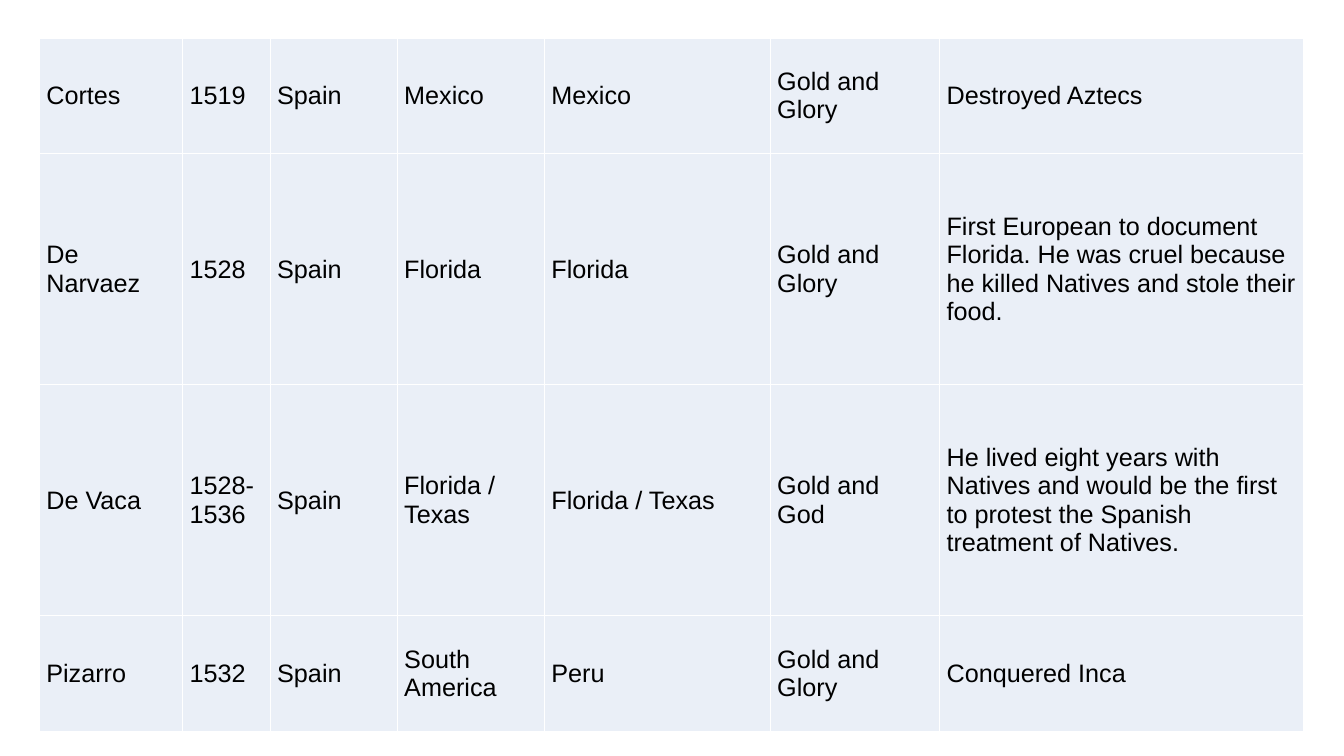
"""Build a slide with a table of Spanish explorers."""
import dataclasses
import typing

import lxml.etree
import pptx
import pptx.dml.color
import pptx.enum.text
import pptx.oxml.ns
import pptx.table
import pptx.util


@dataclasses.dataclass(frozen=True)
class Theme:
    font: str = "Arial"
    text_size: int = 18
    space_after: int = 12
    border_width: int = 1
    text: str = "000000"
    cell: str = "EAEFF7"
    border: str = "FFFFFF"


class Explorer(typing.NamedTuple):
    name: str
    years: str
    country: str
    region: str
    place: str
    motive: str
    outcome: str
    row_units: int


THEME = Theme()
PAGE_WIDTH = pptx.util.Inches(13.33)
PAGE_HEIGHT = pptx.util.Inches(7.5)
TABLE_LEFT = pptx.util.Inches(0.39)
TABLE_TOP = pptx.util.Inches(0.38)
COLUMN_WIDTHS = (1.42, 0.87, 1.26, 1.46, 2.24, 1.68, 3.61)
ROW_UNIT = pptx.util.Inches(1.146)
SIDE_MARGIN = pptx.util.Inches(0.07)

EXPLORERS = (
    Explorer("Cortes", "1519", "Spain", "Mexico", "Mexico",
             "Gold and Glory", "Destroyed Aztecs", 1),
    Explorer("De Narvaez", "1528", "Spain", "Florida", "Florida", "Gold and Glory",
             "First European to document Florida. He was cruel because "
             "he killed Natives and stole their food.", 2),
    Explorer("De Vaca", "1528- 1536", "Spain", "Florida / Texas", "Florida / Texas",
             "Gold and God",
             "He lived eight years with Natives and would be the first "
             "to protest the Spanish treatment of Natives.", 2),
    Explorer("Pizarro", "1532", "Spain", "South America", "Peru",
             "Gold and Glory", "Conquered Inca", 1),
)


def add_borders(cell: pptx.table._Cell) -> None:
    """Draw a thin line on all four sides of a cell."""
    qualified = pptx.oxml.ns.qn
    properties = cell._tc.get_or_add_tcPr()
    for index, side in enumerate(("lnL", "lnR", "lnT", "lnB")):
        line = lxml.etree.Element(qualified(f"a:{side}"),
                                  w=str(pptx.util.Pt(THEME.border_width)))
        fill = lxml.etree.SubElement(line, qualified("a:solidFill"))
        lxml.etree.SubElement(fill, qualified("a:srgbClr"), val=THEME.border)
        properties.insert(index, line)


def fill_cell(cell: pptx.table._Cell, text: str) -> None:
    """Write and format one cell."""
    cell.text = text
    cell.vertical_anchor = pptx.enum.text.MSO_ANCHOR.MIDDLE
    cell.margin_left = cell.margin_right = SIDE_MARGIN
    cell.margin_top = cell.margin_bottom = 0
    cell.fill.solid()
    cell.fill.fore_color.rgb = pptx.dml.color.RGBColor.from_string(THEME.cell)
    para = cell.text_frame.paragraphs[0]
    para.space_after = pptx.util.Pt(THEME.space_after)
    para.font.name = THEME.font
    para.font.size = pptx.util.Pt(THEME.text_size)
    para.font.color.rgb = pptx.dml.color.RGBColor.from_string(THEME.text)
    add_borders(cell)


def main() -> None:
    """Create the deck and save it."""
    deck = pptx.Presentation()
    deck.slide_width, deck.slide_height = PAGE_WIDTH, PAGE_HEIGHT
    page = deck.slides.add_slide(deck.slide_layouts[6])
    row_heights = [ROW_UNIT * explorer.row_units for explorer in EXPLORERS]
    table = page.shapes.add_table(
        len(EXPLORERS), len(COLUMN_WIDTHS), TABLE_LEFT, TABLE_TOP,
        pptx.util.Inches(sum(COLUMN_WIDTHS)), sum(row_heights)).table
    table.first_row = table.horz_banding = False
    for column, width in zip(table.columns, COLUMN_WIDTHS):
        column.width = pptx.util.Inches(width)
    for row, height, explorer in zip(table.rows, row_heights, EXPLORERS):
        row.height = height
        for cell, text in zip(row.cells, explorer[:-1]):
            fill_cell(cell, text)
    deck.save("out.pptx")


if __name__ == "__main__":
    main()
